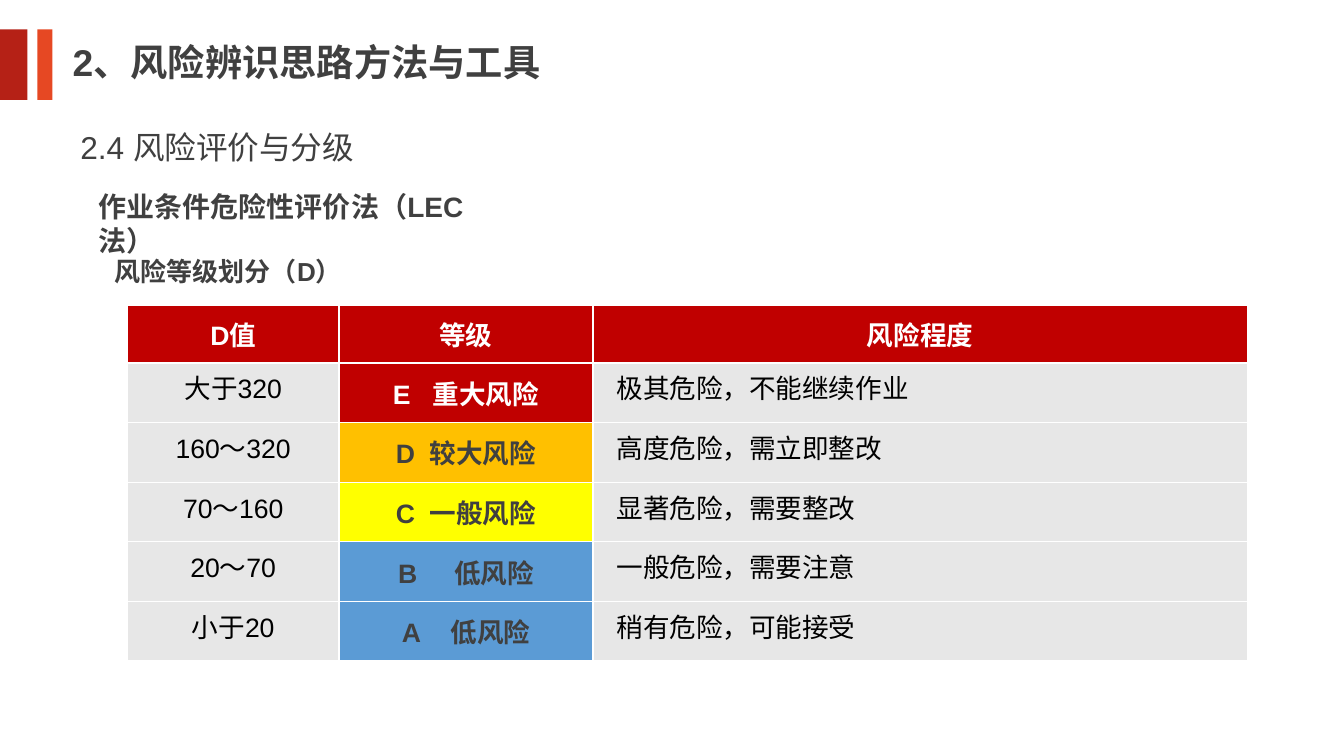
"""Build the slide on risk grading with the LEC method."""
from lxml import etree
from pptx import Presentation
from pptx.dml.color import RGBColor
from pptx.enum.shapes import MSO_SHAPE
from pptx.enum.text import MSO_ANCHOR, MSO_AUTO_SIZE, PP_ALIGN
from pptx.oxml.ns import qn
from pptx.util import Pt

RECTANGLE = MSO_SHAPE.RECTANGLE
TOP, MIDDLE = MSO_ANCHOR.TOP, MSO_ANCHOR.MIDDLE
LEFT, CENTER = PP_ALIGN.LEFT, PP_ALIGN.CENTER
NO_AUTOFIT = MSO_AUTO_SIZE.NONE

DARK_RED = RGBColor(0xB5, 0x21, 0x16)
ORANGE_RED = RGBColor(0xE6, 0x48, 0x23)
GRAPHITE = RGBColor(0x40, 0x40, 0x40)
BLACK = RGBColor(0x00, 0x00, 0x00)
WHITE = RGBColor(0xFF, 0xFF, 0xFF)
PALE_GREY = RGBColor(0xE7, 0xE7, 0xE7)
RED = RGBColor(0xC0, 0x00, 0x00)
AMBER = RGBColor(0xFF, 0xC0, 0x00)
YELLOW = RGBColor(0xFF, 0xFF, 0x00)
BLUE = RGBColor(0x5B, 0x9B, 0xD5)


def write(frame, text, size=19, color=GRAPHITE, bold=False, align=LEFT, before=0, gap=0):
    """Write one paragraph; gap widens the space between its two words."""
    paragraph = frame.paragraphs[0]
    paragraph.alignment = align
    paragraph.space_before = Pt(before)
    for part in text.partition(" ") if gap else [text]:
        run = paragraph.add_run()
        run.text = part
        run.font.name = "Arial"
        run.font.size = Pt(size)
        run.font.bold = bold
        run.font.color.rgb = color
        if part == " ":
            run.font._element.set("spc", str(round(gap * 100)))


def style_cell(cell, fill, anchor=MIDDLE, indent=9.36):
    """Set borders, fill, anchor and margins of a table cell."""
    properties = cell._tc.get_or_add_tcPr()
    for side in ("lnL", "lnR", "lnT", "lnB"):
        border = etree.SubElement(properties, qn(f"a:{side}"), w=str(Pt(1)))
        paint = etree.SubElement(border, qn("a:solidFill"))
        etree.SubElement(paint, qn("a:srgbClr"), val=str(WHITE))
    cell.fill.solid()
    cell.fill.fore_color.rgb = fill
    cell.vertical_anchor = anchor
    cell.margin_left, cell.margin_right = Pt(indent), Pt(9.36)
    cell.margin_top = cell.margin_bottom = Pt(3.6)


deck = Presentation()
deck.slide_width, deck.slide_height = Pt(960), Pt(540)
slide = deck.slides.add_slide(deck.slide_layouts[5])

for left, width, color in [(0, 19.6, DARK_RED), (26.7, 10.7, ORANGE_RED)]:
    bar = slide.shapes.add_shape(RECTANGLE, Pt(left), Pt(21), Pt(width), Pt(50.4))
    bar.shadow.inherit = False
    bar.fill.solid()
    bar.fill.fore_color.rgb = color
    bar.line.fill.background()

title = slide.shapes.title
title.left, title.top, title.width, title.height = Pt(44.6), Pt(24.5), Pt(353.5), Pt(39.6)
title.text_frame.word_wrap = True
title.text_frame.auto_size = NO_AUTOFIT
title.text_frame.vertical_anchor = TOP
write(title.text_frame, "2、风险辨识思路方法与工具", size=26.6, bold=True)

headings = [
    ("2.4 风险评价与分级", 50.4, 87.8, 266.4, 34.6, 22.6, False),
    ("作业条件危险性评价法（LEC法）", 63.4, 131.8, 300.2, 31.7, 20, True),
    ("风险等级划分（D）", 74.9, 178.6, 266.4, 30.2, 18.6, True),
]
for text, left, top, width, height, size, bold in headings:
    heading = slide.shapes.add_textbox(Pt(left), Pt(top), Pt(width), Pt(height))
    heading.text_frame.word_wrap = True
    write(heading.text_frame, text, size=size, bold=bold)

header = ["D值", "等级", "风险程度"]
grades = [
    ("大于320", "E 重大风险", "极其危险，不能继续作业", RED, WHITE, 10.6),
    ("160～320", "D 较大风险", "高度危险，需立即整改", AMBER, GRAPHITE, 5.3),
    ("70～160", "C 一般风险", "显著危险，需要整改", YELLOW, GRAPHITE, 5.3),
    ("20～70", "B 低风险", "一般危险，需要注意", BLUE, GRAPHITE, 21.1),
    ("小于20", "A 低风险", "稍有危险，可能接受", BLUE, GRAPHITE, 15.8),
]
table = slide.shapes.add_table(
    len(grades) + 1, len(header), Pt(91), Pt(218.3), Pt(799.9), Pt(253.6)
).table
table.horz_banding = False
for column, width in zip(table.columns, (151.2, 181.4, 467.3)):
    column.width = Pt(width)
for index, row in enumerate(table.rows):
    row.height = Pt(42.6 if index else 41)

for column, text in enumerate(header):
    cell = table.cell(0, column)
    style_cell(cell, RED)
    write(cell.text_frame, text, color=WHITE, bold=True, align=CENTER, before=3.8)

for row, (score, grade, danger, fill, color, gap) in enumerate(grades, start=1):
    score_cell, grade_cell, danger_cell = table.rows[row].cells
    style_cell(score_cell, PALE_GREY, anchor=TOP)
    write(score_cell.text_frame, score, color=BLACK, align=CENTER, before=3.8)
    style_cell(grade_cell, fill)
    write(grade_cell.text_frame, grade, color=color, bold=True, align=CENTER, before=3.8, gap=gap)
    style_cell(danger_cell, PALE_GREY, anchor=TOP, indent=17)
    write(danger_cell.text_frame, danger, color=BLACK, before=3.8)

deck.save("out.pptx")
